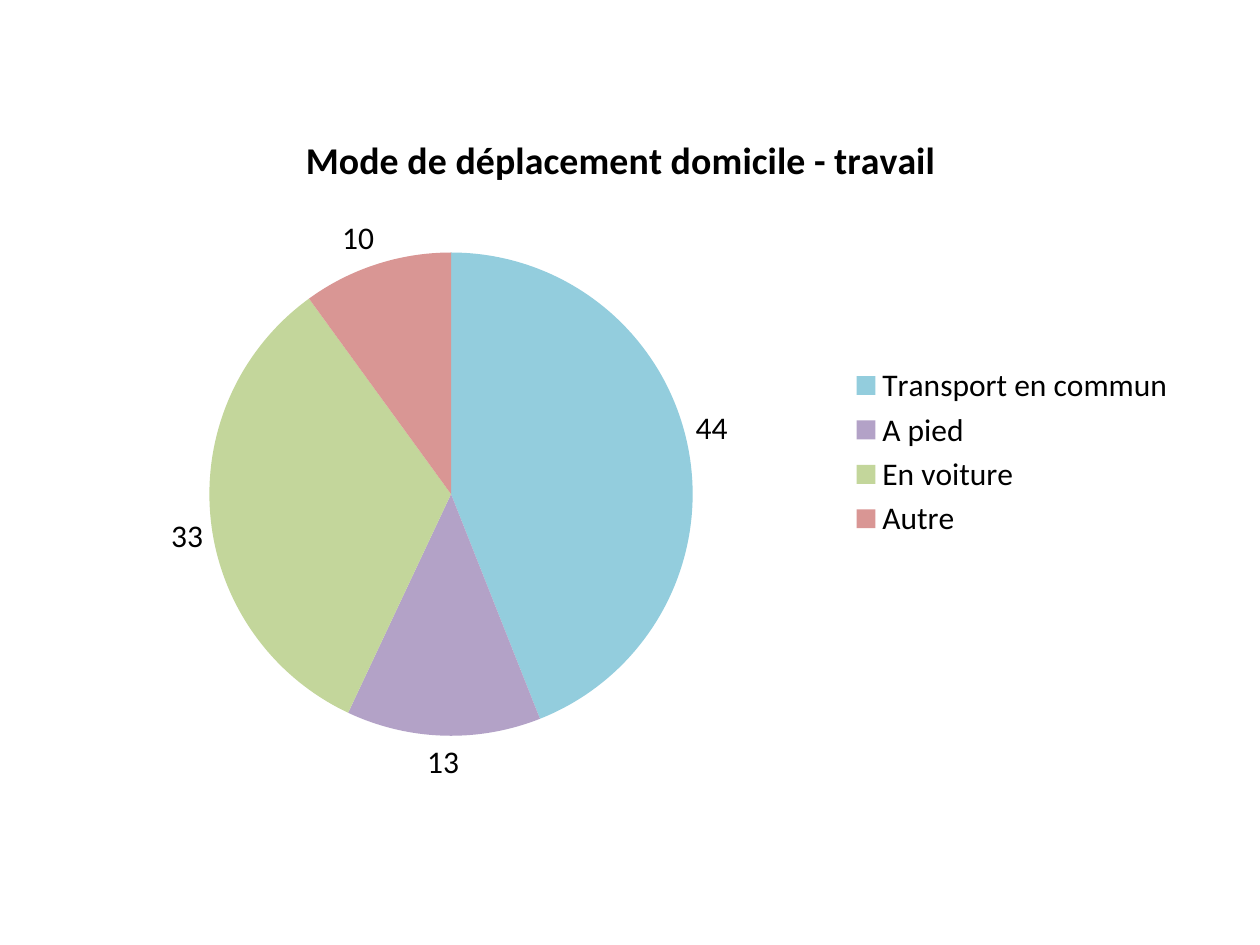
from pptx import Presentation
from pptx.chart.data import CategoryChartData
from pptx.dml.color import RGBColor
from pptx.enum.chart import XL_CHART_TYPE, XL_LABEL_POSITION, XL_LEGEND_POSITION
from pptx.util import Cm, Pt

BLACK = RGBColor(0x00, 0x00, 0x00)
BLUE = RGBColor(0x93, 0xCD, 0xDD)
PURPLE = RGBColor(0xB3, 0xA2, 0xC7)
GREEN = RGBColor(0xC3, 0xD6, 0x9B)
RED = RGBColor(0xD9, 0x96, 0x94)

TITLE = "Mode de déplacement domicile - travail"
TRAVEL_MODES = [
    ("Transport en commun", 44, BLUE),
    ("A pied", 13, PURPLE),
    ("En voiture", 33, GREEN),
    ("Autre", 10, RED),
]


def style_font(font, size, bold=False):
    """Apply the common typeface and colour at the given size."""
    font.name = "Calibri"
    font.size = Pt(size)
    font.bold = bold
    font.color.rgb = BLACK


def add_travel_pie(slide):
    """Add the pie of travel modes and return its chart."""
    modes, shares, _ = zip(*TRAVEL_MODES)
    travel_data = CategoryChartData()
    travel_data.categories = modes
    travel_data.add_series(TITLE, shares)
    return slide.shapes.add_chart(
        XL_CHART_TYPE.PIE, Cm(1.09), Cm(2.13), Cm(22.86), Cm(13.97), travel_data
    ).chart


def add_title(chart):
    """Write the bold chart title."""
    heading = chart.chart_title.text_frame
    heading.text = TITLE
    style_font(heading.paragraphs[0].font, 21.6, bold=True)
    chart.chart_title.include_in_layout = False


def add_legend(chart):
    """Place the legend to the right of the pie."""
    chart.has_legend = True
    chart.legend.position = XL_LEGEND_POSITION.RIGHT
    chart.legend.include_in_layout = False
    style_font(chart.legend.font, 18)


def style_slices(plot):
    """Colour each slice and show its value outside."""
    plot.vary_by_categories = True
    for index, (_, _, colour) in enumerate(TRAVEL_MODES):
        fill = plot.series[0].points[index].format.fill
        fill.solid()
        fill.fore_color.rgb = colour
    labels = plot.series[0].data_labels
    labels.show_value = True
    labels.position = XL_LABEL_POSITION.OUTSIDE_END
    style_font(labels.font, 18)


def main():
    """Build the slide and save it."""
    presentation = Presentation()
    presentation.slide_width = Cm(25.4)
    presentation.slide_height = Cm(19.05)
    slide = presentation.slides.add_slide(presentation.slide_layouts[6])
    chart = add_travel_pie(slide)
    style_font(chart.font, 18)
    add_title(chart)
    add_legend(chart)
    style_slices(chart.plots[0])
    presentation.save("out.pptx")


if __name__ == "__main__":
    main()
